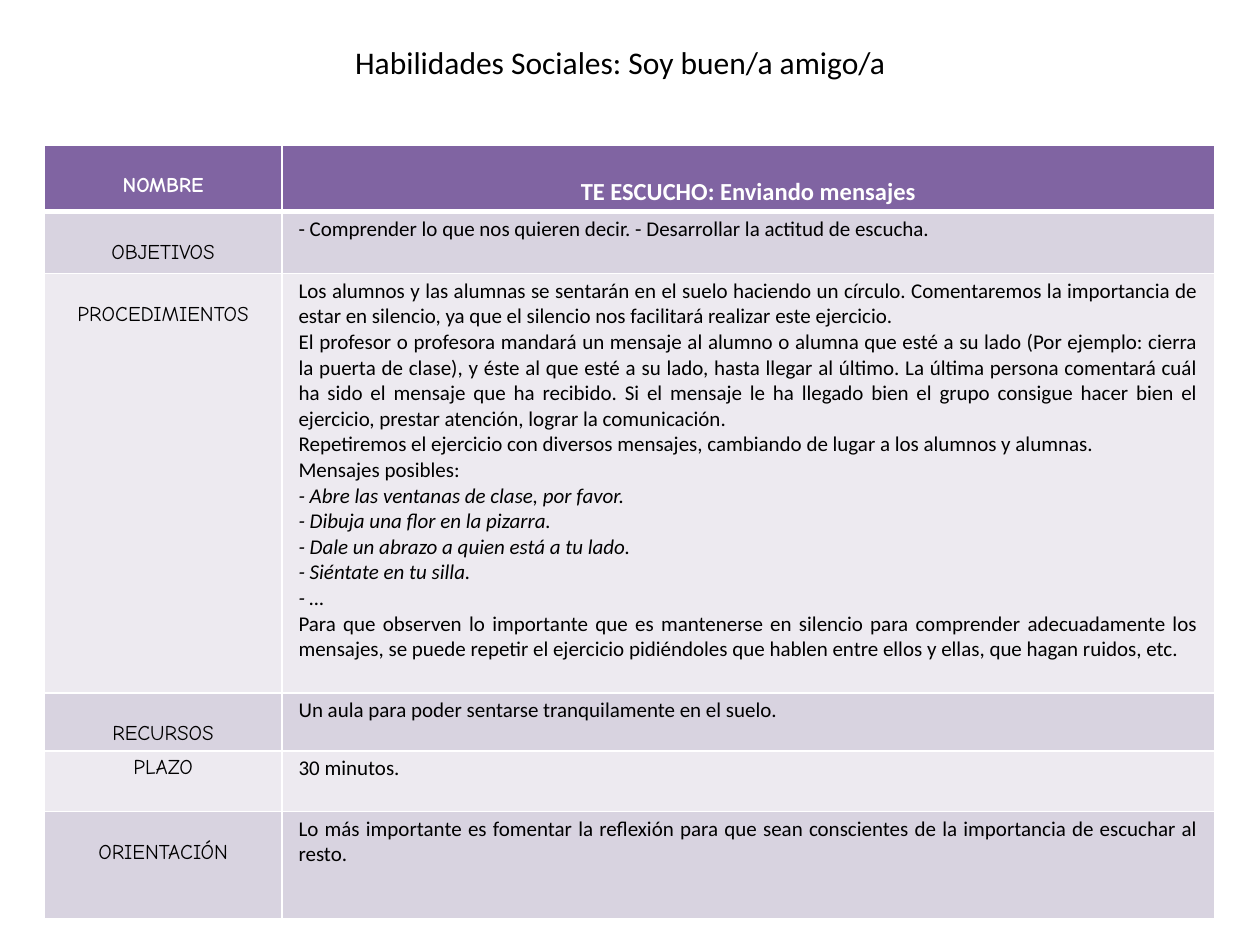
"""Build the slide of the listening activity with its title and activity table."""
from lxml.etree import SubElement
from pptx import Presentation
from pptx.dml.color import RGBColor
from pptx.enum.text import MSO_AUTO_SIZE, PP_ALIGN
from pptx.oxml.ns import qn
from pptx.util import Inches, Pt

TITLE = "Habilidades Sociales: Soy buen/a amigo/a"
HEADER = ("NOMBRE", "TE ESCUCHO: Enviando mensajes")
PROCEDURE = [
    "Los alumnos y las alumnas se sentarán en el suelo haciendo un círculo. Comentaremos la "
    "importancia de estar en silencio, ya que el silencio nos facilitará realizar este ejercicio.",
    "El profesor o profesora mandará un mensaje al alumno o alumna que esté a su lado (Por ejemplo: "
    "cierra la puerta de clase), y éste al que esté a su lado, hasta llegar al último. La última "
    "persona comentará cuál ha sido el mensaje que ha recibido. Si el mensaje le ha llegado bien el "
    "grupo consigue hacer bien el ejercicio, prestar atención, lograr la comunicación.",
    "Repetiremos el ejercicio con diversos mensajes, cambiando de lugar a los alumnos y alumnas.",
    "Mensajes posibles:",
]
MESSAGES = [
    "- Abre las ventanas de clase, por favor.",
    "- Dibuja una flor en la pizarra.",
    "- Dale un abrazo a quien está a tu lado.",
    "- Siéntate en tu silla.",
    "- …",
]
CLOSING = [
    "Para que observen lo importante que es mantenerse en silencio para comprender adecuadamente "
    "los mensajes, se puede repetir el ejercicio pidiéndoles que hablen entre ellos y ellas, que "
    "hagan ruidos, etc.",
]
SECTIONS = [
    ("OBJETIVOS", ["- Comprender lo que nos quieren decir. - Desarrollar la actitud de escucha."]),
    ("PROCEDIMIENTOS", PROCEDURE + MESSAGES + CLOSING),
    ("RECURSOS", ["Un aula para poder sentarse tranquilamente en el suelo."]),
    ("PLAZO", ["30 minutos."]),
    ("ORIENTACIÓN", ["Lo más importante es fomentar la reflexión para que sean conscientes de la "
                     "importancia de escuchar al resto."]),
]
COLUMN_WIDTHS = (1.89, 7.4)
ROW_HEIGHTS = (0.53, 0.49, 3.33, 0.46, 0.48, 0.85)
LABEL_FONT, BODY_FONT = "Comic Neue", "Calibri"
PURPLE, BANDS = "8064A2", ("D8D3E0", "EDEAF0")
WHITE, BLACK = "FFFFFF", "000000"
TOP, LABEL_TOP, HEADING_TOP = 0.04, 0.23, 0.26


def color(value):
    return RGBColor.from_string(value)


def add_run(paragraph, text, font, size, ink, bold=False, italic=False):
    run = paragraph.add_run()
    run.text = text
    run.font.name, run.font.size = font, Pt(size)
    run.font.bold, run.font.italic = bold, italic
    run.font.color.rgb = color(ink)


def style_cell(cell, fill, top, borders):
    cell.margin_left = cell.margin_right = Inches(0.13)
    cell.margin_top, cell.margin_bottom = Inches(top), Inches(0.03)
    properties = cell._tc.get_or_add_tcPr()
    for side, width in borders.items():
        line = SubElement(properties, qn(f"a:{side}"), w=str(Pt(width)))
        SubElement(SubElement(line, qn("a:solidFill")), qn("a:srgbClr"), val=WHITE)
    cell.fill.solid()
    cell.fill.fore_color.rgb = color(fill)


def write_cell(cell, texts, align, font, size, ink, bold=False):
    frame = cell.text_frame
    for index, text in enumerate(texts):
        paragraph = frame.add_paragraph() if index else frame.paragraphs[0]
        paragraph.alignment = align
        add_run(paragraph, text, font, size, ink, bold, text in MESSAGES)


def add_title(slide):
    title = slide.shapes.add_textbox(Inches(2.72), Inches(0.29), Inches(4.8), Inches(0.4))
    title.text_frame.word_wrap = True
    title.text_frame.auto_size = MSO_AUTO_SIZE.SHAPE_TO_FIT_TEXT
    add_run(title.text_frame.paragraphs[0], TITLE, BODY_FONT, 18, BLACK)


def add_activity(slide):
    activity = slide.shapes.add_table(
        len(ROW_HEIGHTS), len(COLUMN_WIDTHS), Inches(0.35), Inches(1.15),
        Inches(sum(COLUMN_WIDTHS)), Inches(sum(ROW_HEIGHTS))).table
    for column, width in zip(activity.columns, COLUMN_WIDTHS):
        column.width = Inches(width)
    for row, height in zip(activity.rows, ROW_HEIGHTS):
        row.height = Inches(height)

    header_borders = {"lnL": 1, "lnR": 1, "lnT": 1, "lnB": 3}
    header_styles = ((LABEL_FONT, 12, LABEL_TOP), (BODY_FONT, 14, HEADING_TOP))
    for column, (text, (font, size, top)) in enumerate(zip(HEADER, header_styles)):
        cell = activity.cell(0, column)
        style_cell(cell, PURPLE, top, header_borders)
        write_cell(cell, [text], PP_ALIGN.CENTER, font, size, WHITE, True)

    for row, (label, texts) in enumerate(SECTIONS, 1):
        borders = {"lnL": 1, "lnR": 1, "lnT": 3 if row == 1 else 1, "lnB": 1}
        band = BANDS[(row - 1) % 2]
        label_cell, text_cell = activity.cell(row, 0), activity.cell(row, 1)
        style_cell(label_cell, band, TOP if label == "PLAZO" else LABEL_TOP, borders)
        write_cell(label_cell, [label], PP_ALIGN.CENTER, LABEL_FONT, 12, BLACK)
        style_cell(text_cell, band, TOP, borders)
        write_cell(text_cell, texts, PP_ALIGN.JUSTIFY, BODY_FONT, 12, BLACK)


def main():
    deck = Presentation()
    deck.slide_width, deck.slide_height = Inches(10), Inches(7.5)
    slide = deck.slides.add_slide(deck.slide_layouts[6])
    add_activity(slide)
    add_title(slide)
    deck.save("out.pptx")


if __name__ == "__main__":
    main()
